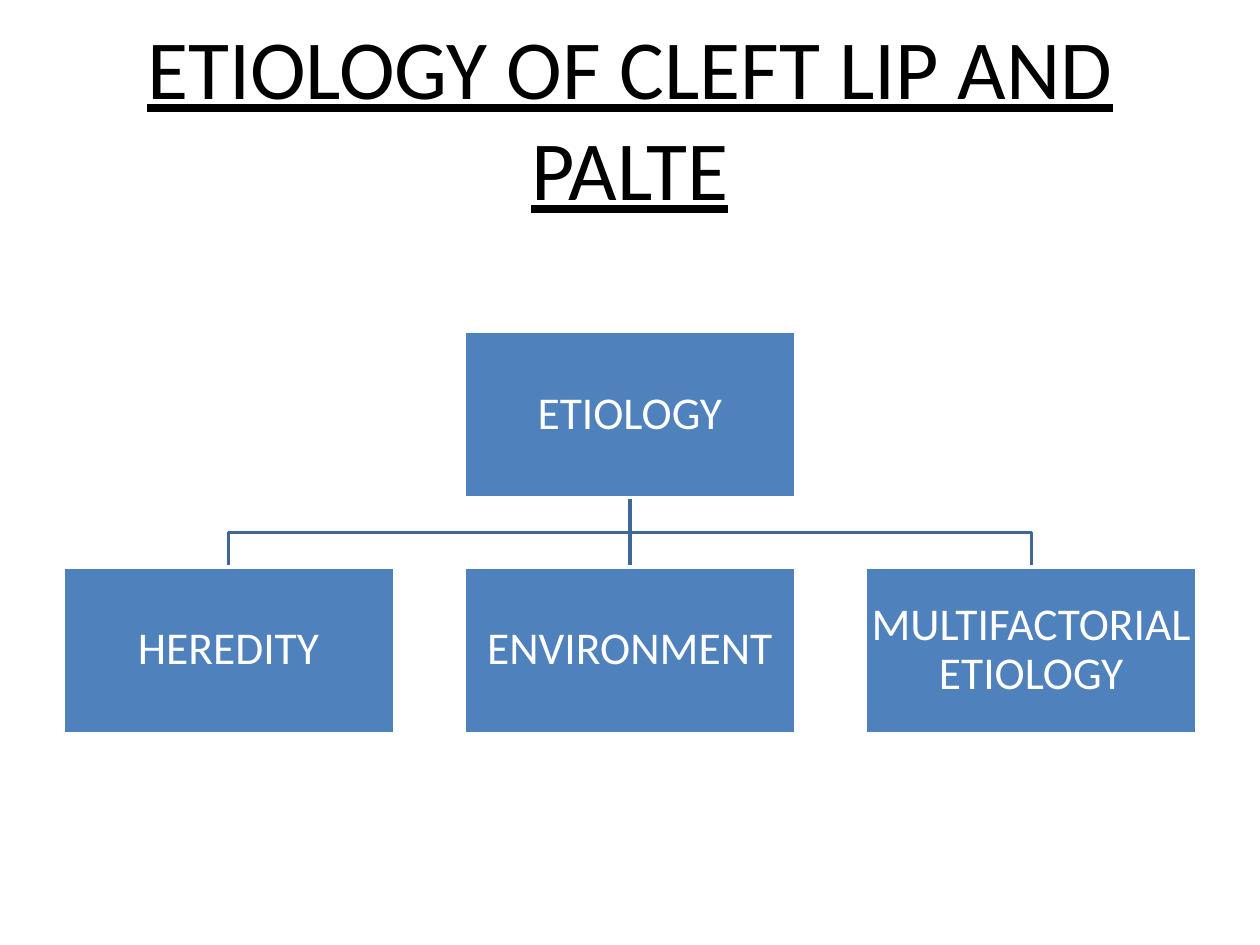
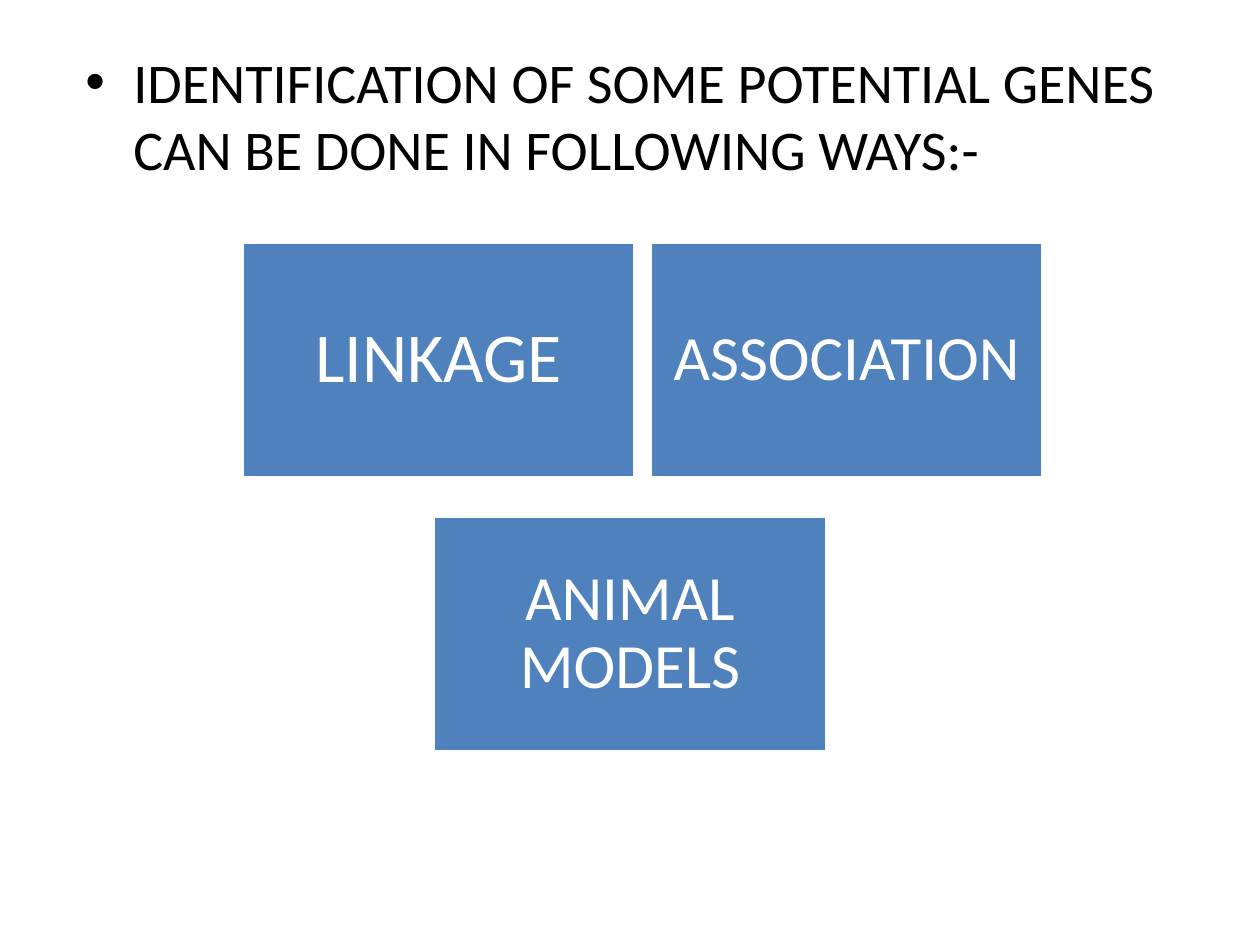
from lxml import etree
from pptx import Presentation
from pptx.dml.color import RGBColor
from pptx.enum.shapes import MSO_CONNECTOR, MSO_SHAPE
from pptx.enum.text import MSO_ANCHOR, PP_ALIGN
from pptx.oxml.ns import qn
from pptx.util import Inches, Pt

RECT = MSO_SHAPE.RECTANGLE
STRAIGHT = MSO_CONNECTOR.STRAIGHT
MIDDLE = MSO_ANCHOR.MIDDLE
CENTER = PP_ALIGN.CENTER
rgb = RGBColor.from_string

FONT = "Calibri"
BLUE, LINK, WHITE, BLACK = "4F81BD", "3F6797", "FFFFFF", "000000"


def add_text(sp, text, size, color):
    tf = sp.text_frame
    tf.word_wrap = True
    p = tf.paragraphs[0]
    r = p.add_run()
    r.text = text
    r.font.name = FONT
    r.font.size = Pt(size)
    r.font.color.rgb = rgb(color)
    return tf, p, r


def add_box(s, x, y, w, h, text, size, inset):
    sp = s.shapes.add_shape(RECT, Inches(x), Inches(y), Inches(w), Inches(h))
    sp.shadow.inherit = False
    sp.fill.solid()
    sp.fill.fore_color.rgb = rgb(BLUE)
    sp.line.color.rgb = rgb(WHITE)
    sp.line.width = Pt(2)
    tf, p, r = add_text(sp, text, size, WHITE)
    tf.vertical_anchor = MIDDLE
    tf.margin_left = tf.margin_right = Inches(inset)
    tf.margin_top = tf.margin_bottom = Inches(inset)
    p.alignment = CENTER
    p.line_spacing = 0.9
    return sp


prs = Presentation()
prs.slide_width = Inches(10)
prs.slide_height = Inches(7.5)
blank = prs.slide_layouts[6]

s = prs.slides.add_slide(blank)
title = s.shapes.add_textbox(Inches(0.5), Inches(0.3), Inches(9), Inches(1.25))
tf, p, r = add_text(title, "ETIOLOGY OF CLEFT LIP AND PALTE", 48, BLACK)
tf.vertical_anchor = MIDDLE
p.alignment = CENTER
r.font.underline = True

box_w, box_h, step = 2.63, 1.32, 3.185
mid_x, root_y, child_y = 5, 2.63, 4.5
root_bottom = root_y + box_h
bend_y = (root_bottom + child_y) / 2

for side in (1, -1):
    child_x = mid_x + side * step
    fb = s.shapes.build_freeform(Inches(mid_x), Inches(root_bottom))
    fb.add_line_segments([(Inches(x), Inches(y)) for x, y in
                          ((mid_x, bend_y), (child_x, bend_y), (child_x, child_y))],
                         close=False)
    branch = fb.convert_to_shape()
    branch.shadow.inherit = False
    branch.fill.background()
    branch.line.color.rgb = rgb(LINK)
    branch.line.width = Pt(2)

stem = s.shapes.add_connector(STRAIGHT, Inches(mid_x), Inches(root_bottom),
                              Inches(mid_x), Inches(child_y))
stem.line.color.rgb = rgb(LINK)
stem.line.width = Pt(2)
etree.SubElement(stem._element.spPr, qn("a:effectLst"))

left = mid_x - box_w / 2
root = add_box(s, left, root_y, box_w, box_h, "ETIOLOGY", 26, 0.02)
causes = ["HEREDITY", "ENVIRONMENT", "MULTIFACTORIAL ETIOLOGY"]
children = [add_box(s, left + (i - 1) * step, child_y, box_w, box_h, cause, 26, 0.02)
            for i, cause in enumerate(causes)]
stem.begin_connect(root, 2)
stem.end_connect(children[1], 0)

s = prs.slides.add_slide(blank)
body = s.shapes.add_textbox(Inches(0.58), Inches(0.33), Inches(8.92), Inches(6.37))
tf, p, r = add_text(
    body, "IDENTIFICATION OF SOME POTENTIAL GENES CAN BE DONE IN FOLLOWING WAYS:-", 32, BLACK)
pPr = p._p.get_or_add_pPr()
pPr.set("marL", str(Inches(0.38)))
pPr.set("indent", str(-Inches(0.38)))
etree.SubElement(pPr, qn("a:buFont"), typeface="Arial")
etree.SubElement(pPr, qn("a:buChar"), char="•")

for x, y, text, size, inset in (
    (1.92, 1.92, "LINKAGE", 40, 0.17),
    (5.16, 1.92, "ASSOCIATION", 36, 0.15),
    (3.44, 4.1, "ANIMAL MODELS", 36, 0.15),
):
    add_box(s, x, y, 3.12, 1.87, text, size, inset)

prs.save("out.pptx")
